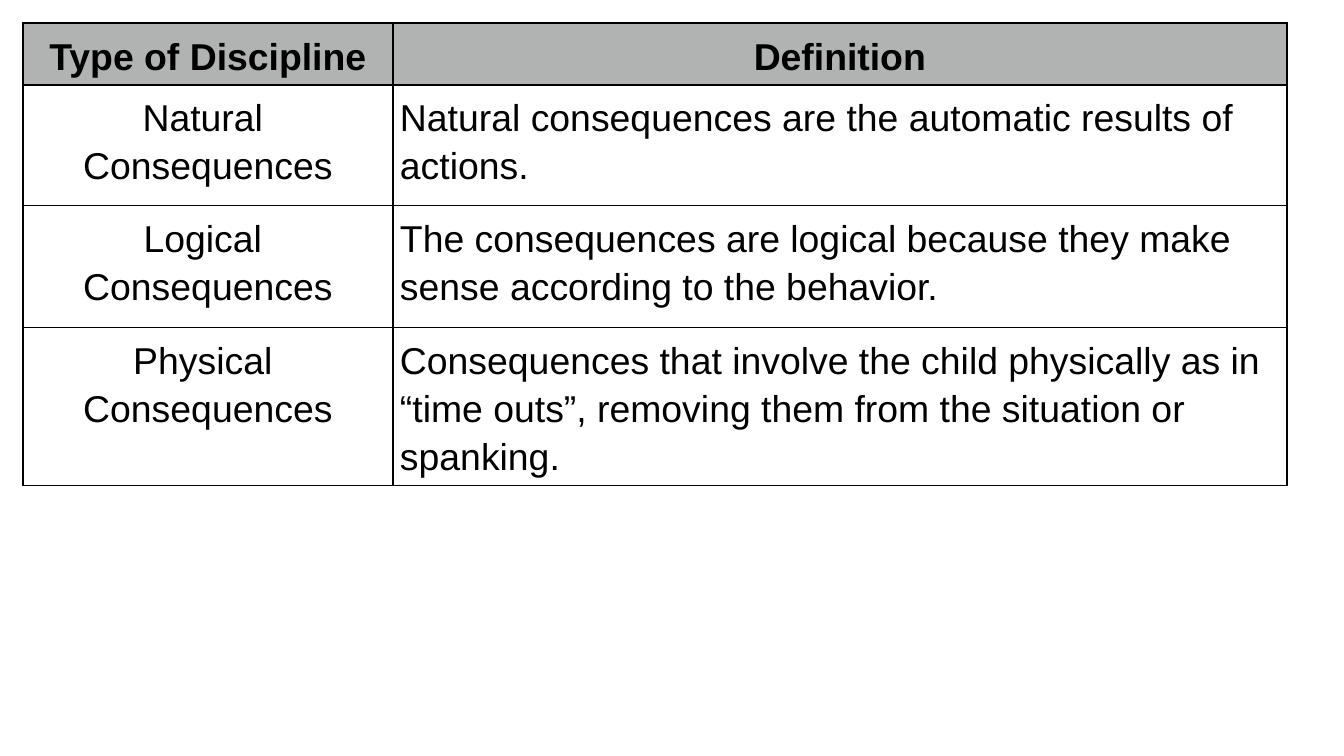
from dataclasses import dataclass

from lxml.etree import SubElement
from pptx import Presentation
from pptx.dml.color import RGBColor as Color
from pptx.enum.text import PP_ALIGN as Align
from pptx.oxml.ns import qn
from pptx.util import Emu, Pt

EMU_PER_PX = 914400 / 134.4

COLUMN_WIDTHS = [370, 894]
ROW_HEIGHTS = [39, 121, 122, 121]
ROWS = [
    ("Type of Discipline", "Definition"),
    ("Natural \nConsequences",
     "Natural consequences are the automatic results of actions."),
    ("Logical \nConsequences",
     "The consequences are logical because they make sense according to the behavior."),
    ("Physical \nConsequences",
     "Consequences that involve the child physically as in “time outs”, "
     "removing them from the situation or spanking."),
]


@dataclass(frozen=True)
class Theme:
    """Colours, type and line sizes."""
    font: str = "Arial"
    size: int = 20
    line_spacing: float = 1.15
    ink: str = "000000"
    header_fill: str = "B0B3B2"
    border_width: float = 0.75
    cell_margin: int = 7


def px(length):
    """Convert pixels to EMU."""
    return Emu(round(length * EMU_PER_PX))


class SlideBuilder:
    """Draws styled elements on the current slide."""

    def __init__(self, slide, theme):
        self.slide = slide
        self.theme = theme

    def border(self, cell):
        """Outline all four sides of a cell."""
        properties = cell._tc.get_or_add_tcPr()
        for side in ("L", "R", "T", "B"):
            line = SubElement(properties, qn(f"a:ln{side}"), w=str(Pt(self.theme.border_width)))
            fill = SubElement(line, qn("a:solidFill"))
            SubElement(fill, qn("a:srgbClr"), val=self.theme.ink)

    def cell(self, cell, text, header, centered):
        """Fill and style one table cell."""
        theme = self.theme
        self.border(cell)
        if header:
            cell.fill.solid()
            cell.fill.fore_color.rgb = Color.from_string(theme.header_fill)
        else:
            cell.fill.background()
        margin = px(theme.cell_margin)
        cell.margin_left = cell.margin_right = margin
        cell.margin_top = cell.margin_bottom = margin
        cell.text = text
        for paragraph in cell.text_frame.paragraphs:
            paragraph.alignment = Align.CENTER if centered else Align.LEFT
            paragraph.line_spacing = theme.line_spacing
            font = paragraph.font
            font.name = theme.font
            font.size = Pt(theme.size)
            font.bold = header
            font.color.rgb = Color.from_string(theme.ink)

    def table(self, left, top, widths, heights, rows):
        """Add a table with a header row and a centred first column."""
        shape = self.slide.shapes.add_table(
            len(rows), len(widths), px(left), px(top), px(sum(widths)), px(sum(heights)))
        table = shape.table
        table.first_row = table.horz_banding = False
        for column, width in zip(table.columns, widths):
            column.width = px(width)
        for row, height in zip(table.rows, heights):
            row.height = px(height)
        for i, texts in enumerate(rows):
            for j, text in enumerate(texts):
                self.cell(table.cell(i, j), text, header=i == 0, centered=i == 0 or j == 0)


def main():
    """Build and save the presentation."""
    presentation = Presentation()
    presentation.slide_width = px(1344)
    presentation.slide_height = px(756)
    slide = presentation.slides.add_slide(presentation.slide_layouts[6])
    builder = SlideBuilder(slide, Theme())
    builder.table(23, 23, COLUMN_WIDTHS, ROW_HEIGHTS, ROWS)
    presentation.save("out.pptx")


if __name__ == "__main__":
    main()
